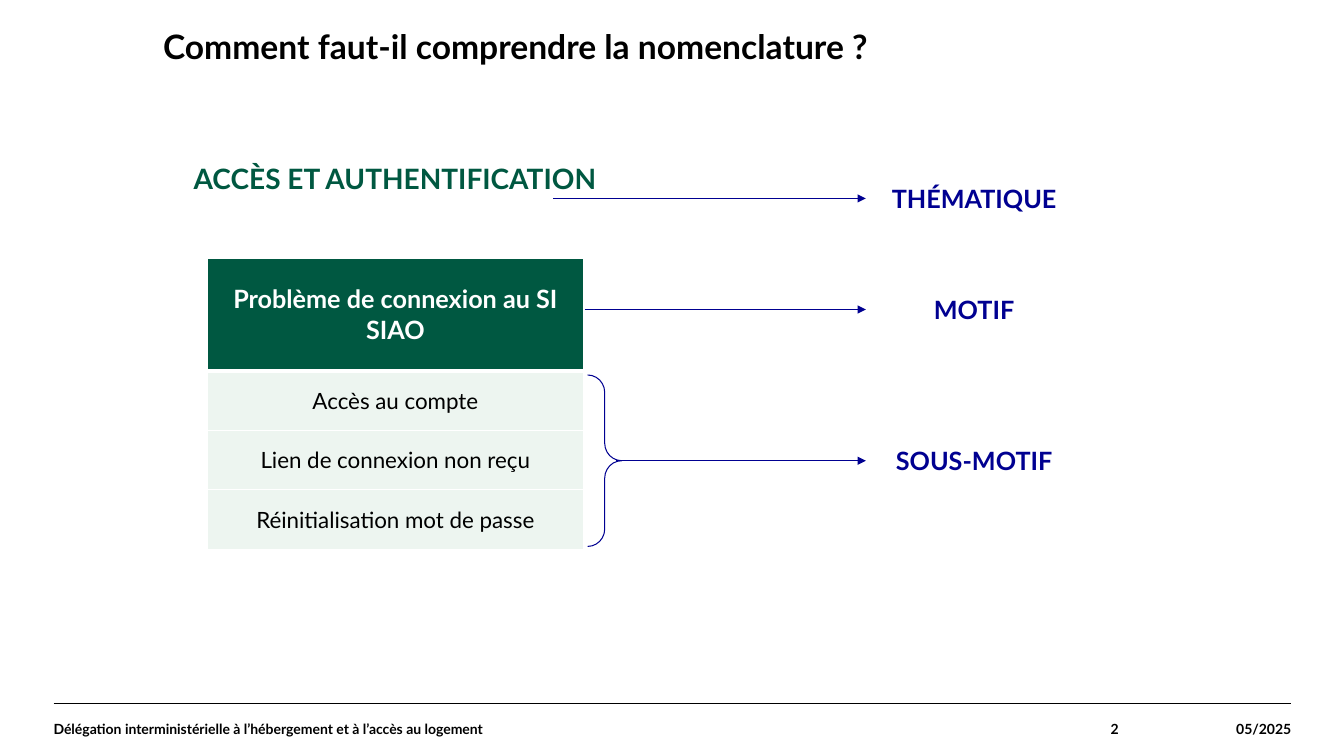
from lxml.etree import SubElement
from pptx import Presentation
from pptx.dml.color import RGBColor
from pptx.enum.shapes import MSO_CONNECTOR as Link, MSO_SHAPE as Shape
from pptx.enum.text import MSO_ANCHOR as Anchor, PP_ALIGN as Align
from pptx.oxml.ns import qn
from pptx.util import Cm, Pt

BLACK, WHITE, BLUE, GREEN, MINT = "000000", "FFFFFF", "000091", "005841", "EDF5F0"


def colour(value):
    return RGBColor.from_string(value)


def write(frame, text, size, tint, bold=True, align=Align.LEFT, anchor=Anchor.TOP):
    frame.word_wrap = True
    frame.vertical_anchor = anchor
    para = frame.paragraphs[0]
    para.alignment = align
    span = para.add_run()
    span.text = text
    span.font.name = "Lato"
    span.font.size = Pt(size)
    span.font.bold = bold
    span.font.color.rgb = colour(tint)
    return para


def add_text(page, place, text, size, tint, inset=True, **layout):
    frame = page.shapes.add_textbox(*map(Cm, place)).text_frame
    if not inset:
        frame.margin_left = frame.margin_right = 0
        frame.margin_top = frame.margin_bottom = 0
    return write(frame, text, size, tint, **layout)


def add_outline(page, kind, place, tint):
    shape = page.shapes.add_shape(kind, *map(Cm, place))
    shape.shadow.inherit = False
    shape.fill.background()
    shape.line.color.rgb = colour(tint)
    shape.line.width = Pt(0.75)
    return shape


def add_line(page, left, right, y, tint, arrow=False):
    line = page.shapes.add_connector(Link.STRAIGHT, Cm(left), Cm(y), Cm(right), Cm(y))
    line.line.color.rgb = colour(tint)
    line.line.width = Pt(0.75)
    if arrow:
        SubElement(line.line._get_or_add_ln(), qn("a:tailEnd"), type="triangle")
    SubElement(line._element.spPr, qn("a:effectLst"))


def add_borders(cell, top, bottom):
    properties = cell._tc.get_or_add_tcPr()
    for side, width in (("L", 1), ("R", 1), ("T", top), ("B", bottom)):
        border = SubElement(properties, qn(f"a:ln{side}"), w=str(Pt(width)))
        fill = SubElement(border, qn("a:solidFill"))
        SubElement(fill, qn("a:srgbClr"), val=WHITE)


def add_reasons(page, reason, details):
    rows = [reason, *details]
    table = page.shapes.add_table(
        len(rows), 1, Cm(5.23), Cm(6.5), Cm(9.47), Cm(7.34)
    ).table
    table.first_row = table.horz_banding = False
    for index, text in enumerate(rows):
        header = index == 0
        table.rows[index].height = Cm(2.84 if header else 1.5)
        cell = table.cell(index, 0)
        cell.margin_left = cell.margin_right = Cm(0.1)
        cell.margin_top = cell.margin_bottom = Cm(0.13)
        add_borders(cell, 3 if index == 1 else 1, 3 if header else 1)
        cell.fill.solid()
        cell.fill.fore_color.rgb = colour(GREEN if header else MINT)
        write(cell.text_frame, text, 18 if header else 16,
              WHITE if header else BLACK, header, Align.CENTER)
        cell.vertical_anchor = Anchor.MIDDLE


def add_footer(page):
    add_line(page, 1.35, 32.54, 17.73, BLACK)
    for left, width, text, align in (
        (1.35, 21.87, "Délégation interministérielle à l’hébergement et à l’accès au logement", Align.LEFT),
        (28.19, 4.35, "05/2025", Align.RIGHT),
        (23.19, 5, "2", Align.RIGHT),
    ):
        add_text(page, (left, 17.7, width, 1.35), text, 10, BLACK,
                 inset=False, align=align, anchor=Anchor.MIDDLE)


def add_level(page, start, y, name):
    add_line(page, start, 21.82, y, BLUE, arrow=True)
    add_text(page, (21.82, y - 0.51, 5.46, 1.02), name, 18, BLUE, align=Align.CENTER)


def main():
    deck = Presentation()
    deck.slide_width, deck.slide_height = Cm(33.87), Cm(19.05)
    page = deck.slides.add_slide(deck.slide_layouts[6])

    add_footer(page)
    title = add_text(page, (4.11, 0.76, 28.52, 2.67),
                     "Comment faut-il comprendre la nomenclature ?", 24, BLACK, inset=False)
    title.line_spacing = 0.9

    panel = add_outline(page, Shape.RECTANGLE, (4.57, 3.94, 10.77, 10.34), WHITE)
    write(panel.text_frame, "ACCÈS ET AUTHENTIFICATION", 20, GREEN, align=Align.CENTER)
    add_reasons(page, "Problème de connexion au SI SIAO",
                ["Accès au compte", "Lien de connexion non reçu", "Réinitialisation mot de passe"])

    for start, y, name in (
        (13.94, 5, "THÉMATIQUE"),
        (14.73, 7.8, "MOTIF"),
        (15.52, 11.61, "SOUS-MOTIF"),
    ):
        add_level(page, start, y, name)

    brace = add_outline(page, Shape.RIGHT_BRACE, (14.81, 9.45, 0.86, 4.32), BLUE)
    brace.adjustments[0] = 0.51
    brace.adjustments[1] = 0.5
    deck.save("out.pptx")


if __name__ == "__main__":
    main()
